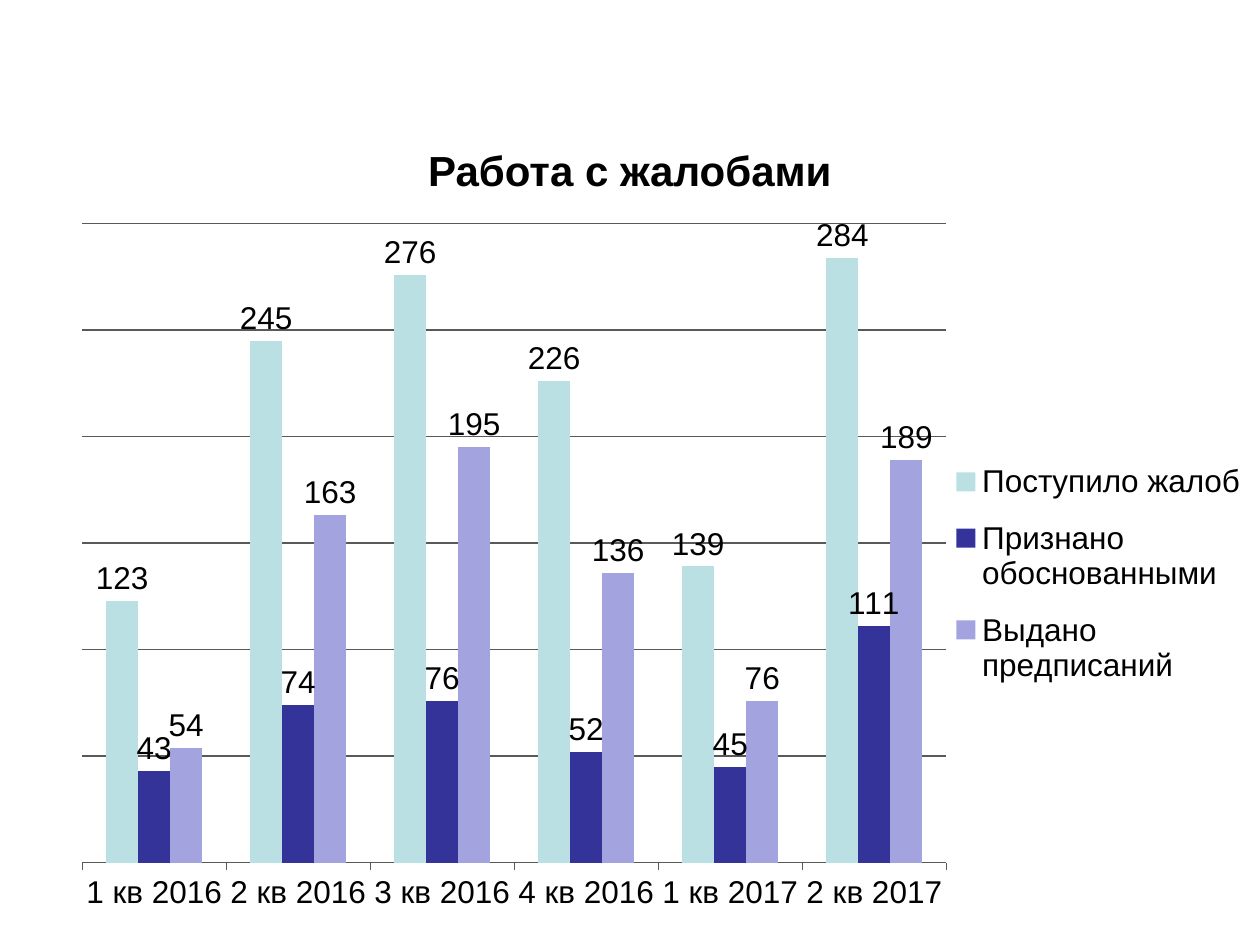
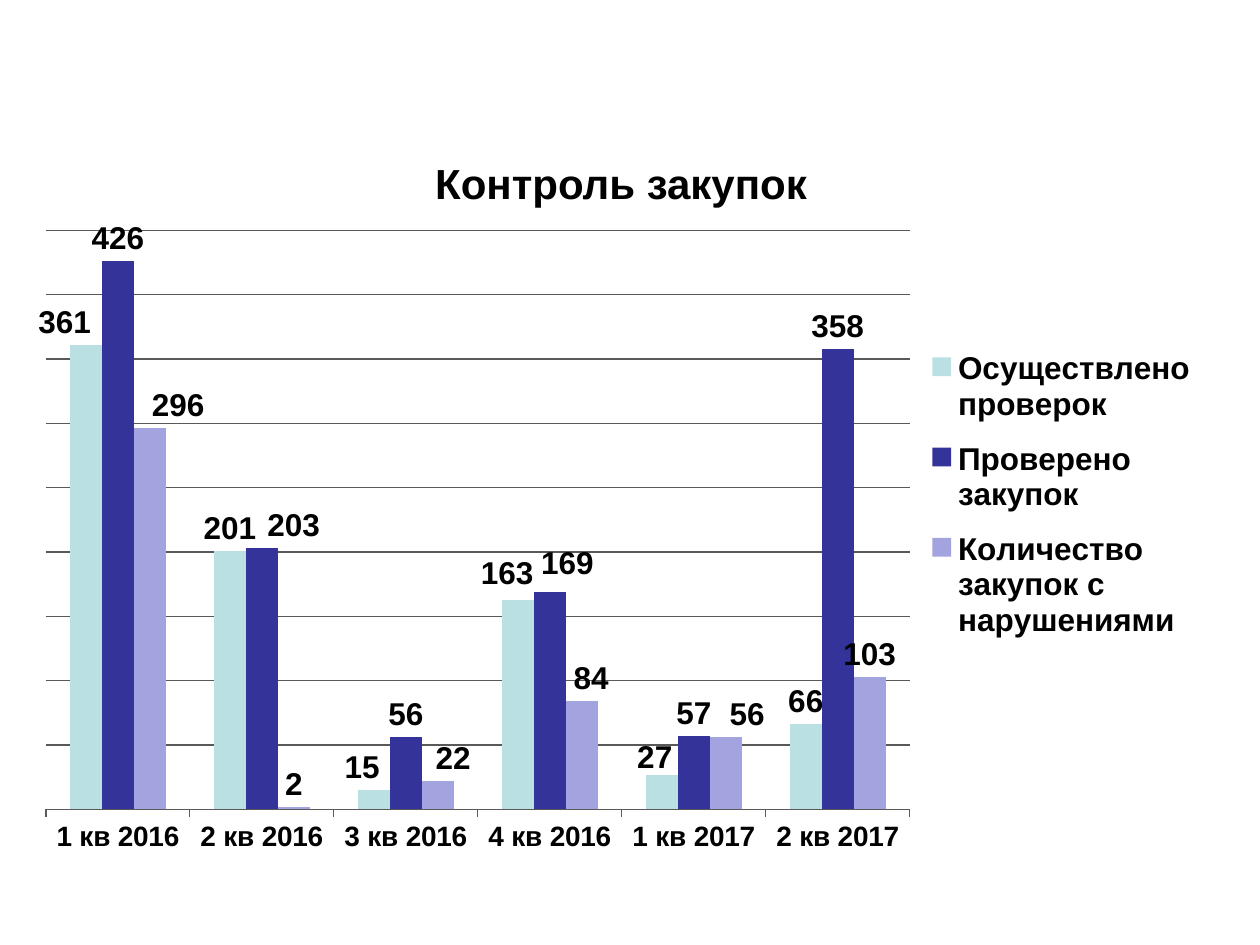
from dataclasses import dataclass

from lxml import etree
from pptx import Presentation
from pptx.chart.data import CategoryChartData
from pptx.dml.color import RGBColor
from pptx.enum.chart import XL_CHART_TYPE, XL_LABEL_POSITION, XL_LEGEND_POSITION, XL_TICK_LABEL_POSITION, XL_TICK_MARK
from pptx.enum.text import MSO_ANCHOR, PP_ALIGN
from pptx.oxml.ns import qn
from pptx.util import Inches, Pt

CLUSTERED = XL_CHART_TYPE.COLUMN_CLUSTERED
OUTSIDE_END = XL_LABEL_POSITION.OUTSIDE_END
LEGEND_RIGHT = XL_LEGEND_POSITION.RIGHT
LABELS_LOW = XL_TICK_LABEL_POSITION.LOW
TICK_OUT, TICK_NONE = XL_TICK_MARK.OUTSIDE, XL_TICK_MARK.NONE
MIDDLE, CENTER = MSO_ANCHOR.MIDDLE, PP_ALIGN.CENTER


@dataclass(frozen=True)
class Theme:
    font: str = "Arial"
    text: RGBColor = RGBColor(0, 0, 0)
    line: RGBColor = RGBColor(0x59, 0x59, 0x59)
    background: RGBColor = RGBColor(255, 255, 255)
    series: tuple = (RGBColor(0xBB, 0xE0, 0xE3), RGBColor(0x33, 0x33, 0x99), RGBColor(0xA3, 0xA3, 0xE0))
    title_size: int = 24
    chart_size: int = 18
    line_width: float = 0.75


THEME = Theme()
QUARTERS = ["1 кв 2016", "2 кв 2016", "3 кв 2016", "4 кв 2016", "1 кв 2017", "2 кв 2017"]

COMPLAINTS = {
    "title": "Работа с жалобами",
    "title_box": (0.5, 0.99, 9, 0.71),
    "chart_box": (0.5, 1.62, 9.5, 5.75),
    "plot": (0.016, 0.027, 0.722, 0.882),
    "legend": (0.735, 0.33, 0.26, 0.36),
    "maximum": 300,
    "bold": False,
    "category_size": 18,
    "series": {
        "Поступило жалоб": (123, 245, 276, 226, 139, 284),
        "Признано обоснованными": (43, 74, 76, 52, 45, 111),
        "Выдано предписаний": (54, 163, 195, 136, 76, 189),
    },
    "label_shifts": ({}, {}, {}),
}
PURCHASES = {
    "title": "Контроль закупок",
    "title_box": (0.43, 1.07, 9, 0.76),
    "chart_box": (0.28, 1.62, 9.38, 5.62),
    "plot": (0.009, 0.037, 0.731, 0.818),
    "legend": (0.743, 0.18, 0.25, 0.46),
    "maximum": 450,
    "bold": True,
    "category_size": 16,
    "series": {
        "Осуществлено проверок": (361, 201, 15, 163, 27, 66),
        "Проверено закупок": (426, 203, 56, 169, 57, 358),
        "Количество закупок с нарушениями": (296, 2, 22, 84, 56, 103),
    },
    "label_shifts": (
        {0: (-0.018, 0), 2: (-0.01, 0), 3: (-0.009, -0.005), 4: (-0.006, 0.007)},
        {1: (0.027, 0), 3: (0.015, -0.008)},
        {0: (0.024, 0), 2: (0.013, 0), 3: (0.008, 0), 4: (0.018, 0)},
    ),
}


def set_font(font, size, bold):
    font.name, font.size, font.bold = THEME.font, Pt(size), bold
    font.color.rgb = THEME.text


def set_line(line):
    line.color.rgb = THEME.line
    line.width = Pt(THEME.line_width)


def make_layout(settings):
    layout = etree.Element(qn("c:layout"))
    manual = etree.SubElement(layout, qn("c:manualLayout"))
    for tag, value in settings.items():
        etree.SubElement(manual, qn(f"c:{tag}")).set("val", str(value))
    return layout


def put_layout(element, before, settings):
    for old in element.findall(qn("c:layout")):
        element.remove(old)
    layout = make_layout(settings)
    if before is None:
        element.insert(0, layout)
    else:
        element.find(qn(before)).addnext(layout)


def box_settings(box):
    return {"xMode": "edge", "yMode": "edge", **dict(zip("xywh", box))}


def add_title(slide, text, box):
    tf = slide.shapes.add_textbox(*map(Inches, box)).text_frame
    tf.word_wrap = True
    tf.vertical_anchor = MIDDLE
    p = tf.paragraphs[0]
    p.text = text
    p.alignment = CENTER
    set_font(p.font, THEME.title_size, True)


def style_axes(chart, content):
    category, value = chart.category_axis, chart.value_axis
    category.major_tick_mark, category.minor_tick_mark = TICK_OUT, TICK_NONE
    category.tick_label_position = LABELS_LOW
    set_font(category.tick_labels.font, content["category_size"], content["bold"])
    set_line(category.format.line)
    value.minimum_scale, value.maximum_scale, value.major_unit = 0, content["maximum"], 50
    value.has_major_gridlines = True
    set_line(value.major_gridlines.format.line)
    value.visible = False


def style_series(series, color, shifts, bold):
    series.format.fill.solid()
    series.format.fill.fore_color.rgb = color
    labels = series.data_labels
    labels.show_value = True
    labels.position = OUTSIDE_END
    set_font(labels.font, THEME.chart_size, bold)
    for index in shifts:
        label = series.points[index].data_label
        set_font(label.font, THEME.chart_size, bold)
        label.position = OUTSIDE_END
    for element, (x, y) in zip(labels._element.findall(qn("c:dLbl")), shifts.values()):
        put_layout(element, "c:idx", {"x": x, "y": y})


def add_column_chart(slide, content):
    data = CategoryChartData()
    data.categories = QUARTERS
    for name, values in content["series"].items():
        data.add_series(name, values)
    chart = slide.shapes.add_chart(CLUSTERED, *map(Inches, content["chart_box"]), data).chart
    chart.has_title = False
    set_font(chart.font, THEME.chart_size, False)
    style_axes(chart, content)
    plot = chart.plots[0]
    plot.gap_width, plot.overlap, plot.vary_by_categories = 150, 0, False
    for series, color, shifts in zip(plot.series, THEME.series, content["label_shifts"]):
        style_series(series, color, shifts, content["bold"])
    chart.has_legend = True
    chart.legend.position = LEGEND_RIGHT
    chart.legend.include_in_layout = False
    set_font(chart.legend.font, THEME.chart_size, content["bold"])
    put_layout(chart.legend._element, "c:legendPos", box_settings(content["legend"]))
    plot_area = chart._chartSpace.find(".//" + qn("c:plotArea"))
    put_layout(plot_area, None, {"layoutTarget": "inner", **box_settings(content["plot"])})


def add_chart_slide(prs, content):
    slide = prs.slides.add_slide(prs.slide_layouts[6])
    slide.background.fill.solid()
    slide.background.fill.fore_color.rgb = THEME.background
    add_title(slide, content["title"], content["title_box"])
    add_column_chart(slide, content)


def main():
    prs = Presentation()
    prs.slide_width, prs.slide_height = Inches(10), Inches(7.5)
    for content in (COMPLAINTS, PURCHASES):
        add_chart_slide(prs, content)
    prs.save("out.pptx")


if __name__ == "__main__":
    main()
